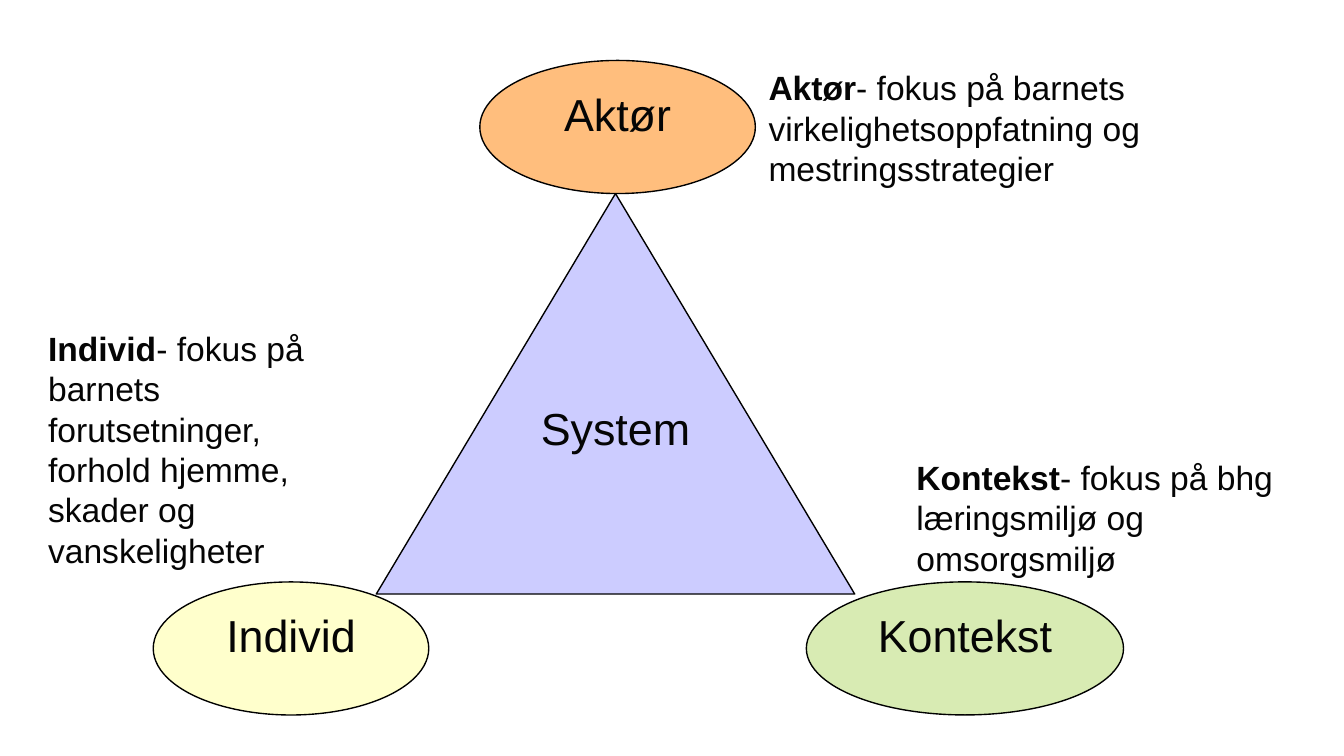
import pptx
import pptx.dml.color
import pptx.enum.shapes
import pptx.enum.text
import pptx.util

Inches = pptx.util.Inches
Pt = pptx.util.Pt
RGBColor = pptx.dml.color.RGBColor
Shape = pptx.enum.shapes.MSO_SHAPE

INK = RGBColor(0x05, 0x05, 0x05)
OUTLINE = RGBColor(0x00, 0x00, 0x00)
LAVENDER = RGBColor(0xCC, 0xCC, 0xFF)
YELLOW = RGBColor(0xFF, 0xFF, 0xCC)
ORANGE = RGBColor(0xFF, 0xBE, 0x7D)
GREEN = RGBColor(0xD8, 0xEB, 0xB3)

PAGE_WIDTH = 10
PAGE_HEIGHT = PAGE_WIDTH * 9 / 16
NODE_HEIGHT = 0.99


def style_paragraph(para, size):
    para.font.name = "Arial"
    para.font.size = Pt(size)
    para.font.color.rgb = INK


def add_node(group, kind, label, fill, left, top, width, height):
    node = group.shapes.add_shape(
        kind, Inches(left), Inches(top), Inches(width), Inches(height))
    node.shadow.inherit = False
    node.fill.solid()
    node.fill.fore_color.rgb = fill
    node.line.color.rgb = OUTLINE
    node.line.width = Pt(0.75)
    node.text_frame.vertical_anchor = pptx.enum.text.MSO_ANCHOR.TOP
    para = node.text_frame.paragraphs[0]
    para.text = label
    para.alignment = pptx.enum.text.PP_ALIGN.CENTER
    style_paragraph(para, 24)


def add_system_triangle(page, left, top, width, height):
    """Draw the triangle with one ellipse at its apex and one at each foot."""
    group = page.shapes.add_group_shape()
    foot = top + height - NODE_HEIGHT
    add_node(group, Shape.ISOSCELES_TRIANGLE, "System", LAVENDER,
             left + 1.66, top + NODE_HEIGHT, 3.56, 2.98)
    ellipses = [
        ("Individ", YELLOW, left, foot, 2.05),
        ("Aktør", ORANGE, left + 2.43, top, 2.05),
        ("Kontekst", GREEN, left + width - 2.36, foot, 2.36),
    ]
    for label, fill, x, y, ellipse_width in ellipses:
        add_node(group, Shape.OVAL, label, fill, x, y, ellipse_width, NODE_HEIGHT)


def add_explanation(page, term, focus, left, top, width, height):
    box = page.shapes.add_textbox(
        Inches(left), Inches(top), Inches(width), Inches(height))
    box.text_frame.word_wrap = True
    box.text_frame.auto_size = pptx.enum.text.MSO_AUTO_SIZE.SHAPE_TO_FIT_TEXT
    para = box.text_frame.paragraphs[0]
    style_paragraph(para, 18)
    span = para.add_run()
    span.text = term
    span.font.bold = True
    para.add_run().text = focus


def main():
    deck = pptx.Presentation()
    deck.slide_width = Inches(PAGE_WIDTH)
    deck.slide_height = Inches(PAGE_HEIGHT)
    page = deck.slides.add_slide(deck.slide_layouts[6])

    add_system_triangle(page, 1.14, 0.45, 7.22, 4.87)
    add_explanation(page, "Aktør",
                    "- fokus på barnets virkelighetsoppfatning og mestringsstrategier",
                    5.62, 0.45, 3.63, 1.01)
    add_explanation(page, "Kontekst",
                    "- fokus på bhg læringsmiljø og omsorgsmiljø",
                    6.72, 3.35, 3.28, 1.01)
    add_explanation(page, "Individ",
                    "- fokus på barnets forutsetninger, forhold hjemme, "
                    "skader og vanskeligheter",
                    0.26, 2.39, 2.37, 1.92)
    deck.save("out.pptx")


if __name__ == "__main__":
    main()
